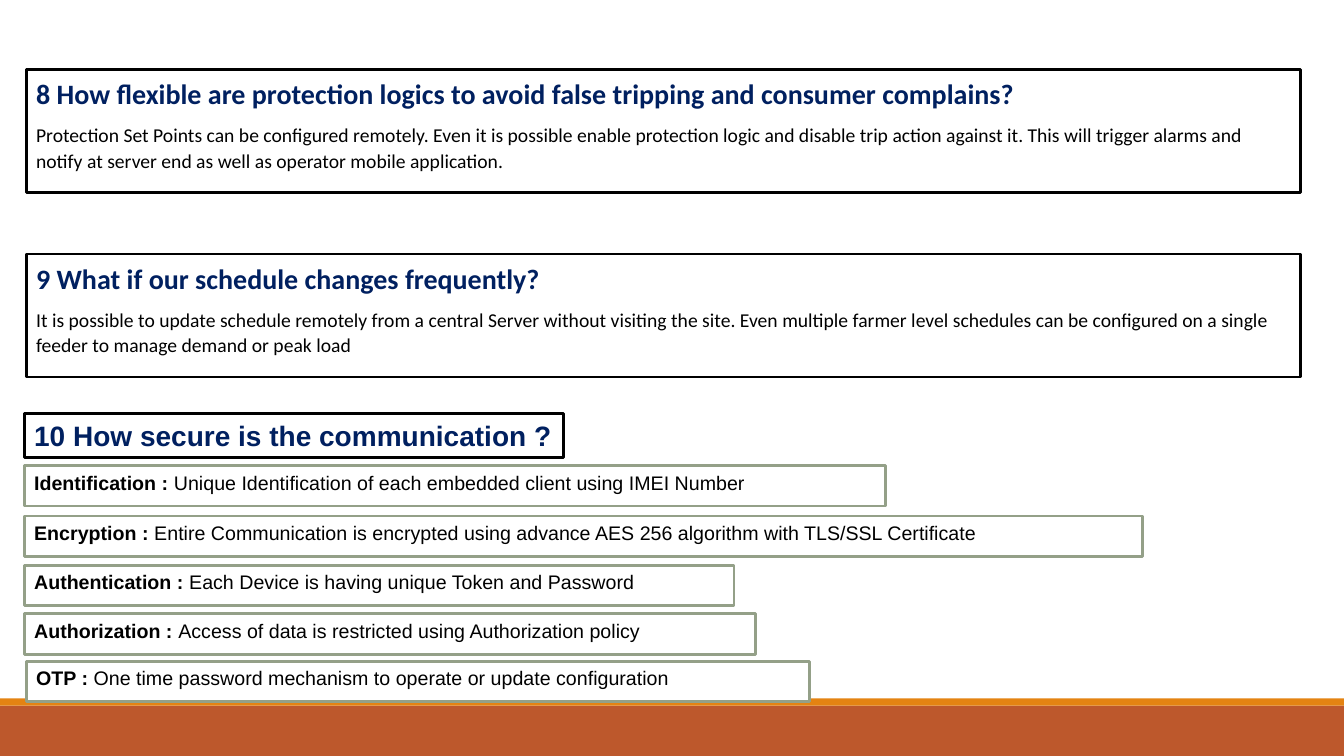
from dataclasses import dataclass

from pptx import Presentation
from pptx import util as u
from pptx.dml.color import RGBColor
from pptx.enum import shapes, text

PX = 9144  # EMU in one px, 100 px to the inch
SLIDE_WIDTH, SLIDE_HEIGHT = 1333, 750


@dataclass(frozen=True)
class Theme:
    paper: str = "FFFFFF"
    ink: str = "000000"
    heading: str = "002060"
    sage: str = "94A088"
    rust: str = "BD582C"
    orange: str = "E48312"
    answer_font: str = "Calibri"
    security_font: str = "Arial"
    heading_size: int = 20
    body_size: int = 14
    border: int = 2


THEME = Theme()

ANSWERS = [
    (69, "8 How flexible are protection logics to avoid false tripping and consumer complains?",
     "Protection Set Points can be configured remotely. Even it is possible enable protection "
     "logic and disable trip action against it. This will trigger alarms and notify at server "
     "end as well as operator mobile application."),
    (252, "9 What if our schedule changes frequently?",
     "It is possible to update schedule remotely from a central Server without visiting the "
     "site. Even multiple farmer level schedules can be configured on a single feeder to "
     "manage demand or peak load"),
]

# left, top, width, term, explanation
MEASURES = [
    (24, 462, 854, "Identification :",
     " Unique Identification of each embedded client using IMEI Number"),
    (24, 512, 1109, "Encryption :",
     " Entire Communication is encrypted using advance AES 256 algorithm with TLS/SSL Certificate"),
    (24, 561, 704, "Authentication : ", "Each Device is having unique Token and Password"),
    (24, 609, 725, "Authorization : ", "Access of data is restricted using Authorization policy"),
    (26, 656, 777, "OTP : ", "One time password mechanism to operate or update configuration"),
]


def add_box(slide, box, fill, border=None):
    left, top, width, height = (length * PX for length in box)
    shape = slide.shapes.add_shape(shapes.MSO_SHAPE.RECTANGLE, left, top, width, height)
    shape.shadow.inherit = False
    shape.fill.solid()
    shape.fill.fore_color.rgb = RGBColor.from_string(fill)
    if border:
        shape.line.color.rgb = RGBColor.from_string(border)
        shape.line.width = u.Pt(THEME.border)
    else:
        shape.line.fill.background()
    shape.text_frame.word_wrap = True
    shape.text_frame.vertical_anchor = text.MSO_ANCHOR.TOP
    return shape


def style(paragraph, font_name, size, color, bold=None):
    paragraph.alignment = text.PP_ALIGN.LEFT
    font = paragraph.font
    font.name, font.size, font.bold = font_name, u.Pt(size), bold
    font.color.rgb = RGBColor.from_string(color)


def style_heading(paragraph, font_name):
    style(paragraph, font_name, THEME.heading_size, THEME.heading, True)


def add_footer(slide, box):
    """Rust band with an orange strip along its top edge."""
    left, top, width, height = box
    strip = 7
    add_box(slide, (left, top + strip, width, height - strip), THEME.rust)
    add_box(slide, (left, top, width, strip), THEME.orange)


def add_answer(slide, box, question, answer):
    frame = add_box(slide, box, THEME.paper, THEME.ink).text_frame
    heading, body = frame.paragraphs[0], frame.add_paragraph()
    heading.text, body.text = question, answer
    style_heading(heading, THEME.answer_font)
    style(body, THEME.answer_font, THEME.body_size, THEME.ink, False)
    for paragraph in (heading, body):
        paragraph.line_spacing = 1.07
        paragraph.space_after = u.Pt(8)


def add_security_heading(slide, box, question):
    paragraph = add_box(slide, box, THEME.paper, THEME.ink).text_frame.paragraphs[0]
    paragraph.text = question
    style_heading(paragraph, THEME.security_font)


def add_measure(slide, box, term, explanation):
    paragraph = add_box(slide, box, THEME.paper, THEME.sage).text_frame.paragraphs[0]
    for words, bold in ((term, True), (explanation, False)):
        run = paragraph.add_run()
        run.text, run.font.bold = words, bold
    style(paragraph, THEME.security_font, THEME.body_size, THEME.ink)


def main():
    presentation = Presentation()
    presentation.slide_width = SLIDE_WIDTH * PX
    presentation.slide_height = SLIDE_HEIGHT * PX
    slide = presentation.slides.add_slide(presentation.slide_layouts[6])

    # Footer band
    add_footer(slide, (0, 693, SLIDE_WIDTH, 57))

    # Questions 8 and 9
    for top, question, answer in ANSWERS:
        add_answer(slide, (26, top, 1264, 122), question, answer)

    # Question 10 with its security measures
    add_security_heading(slide, (24, 410, 535, 44), "10 How secure is the communication ?")
    for left, top, width, term, explanation in MEASURES:
        add_measure(slide, (left, top, width, 40), term, explanation)

    presentation.save("out.pptx")


if __name__ == "__main__":
    main()
